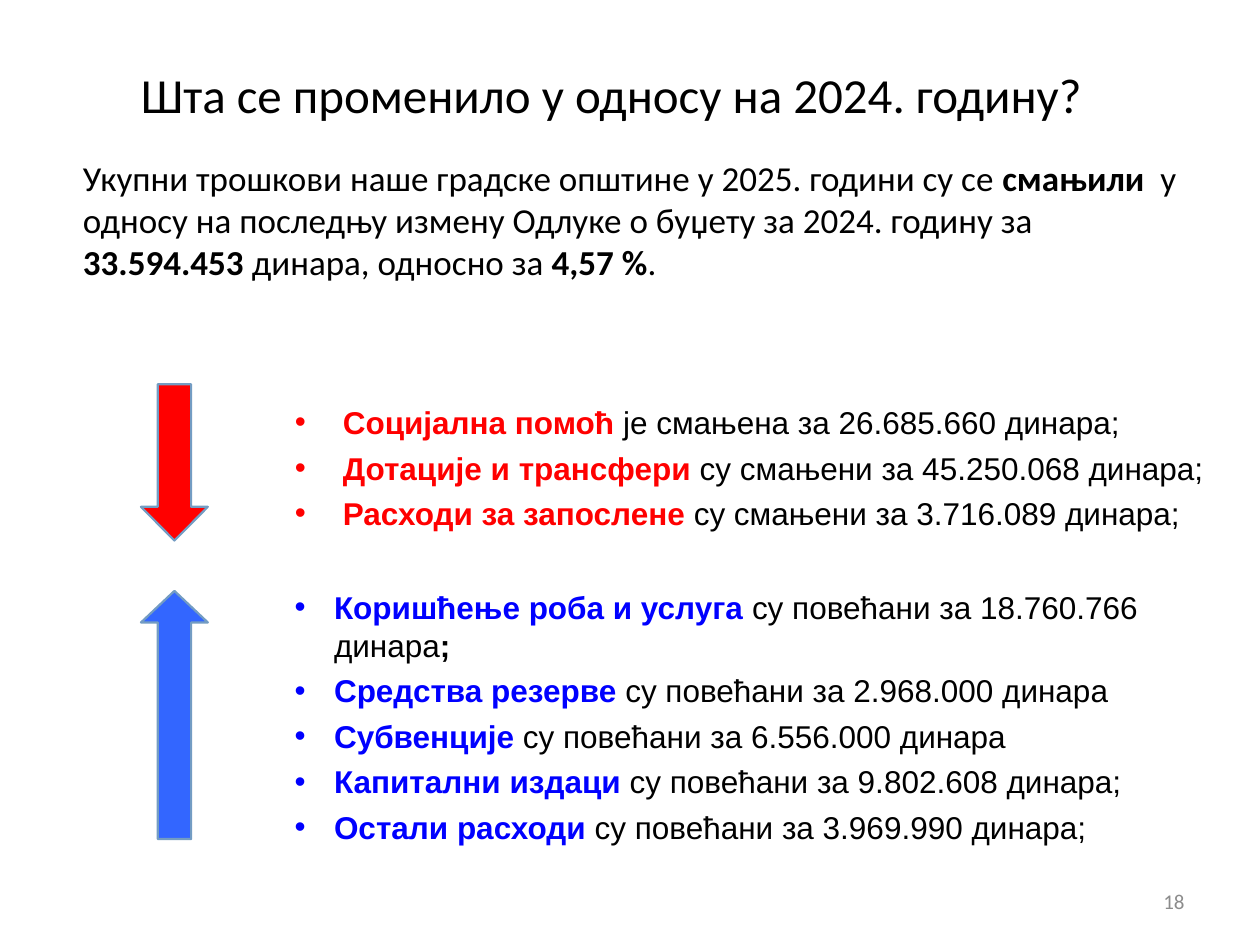
"""Builds the slide on budget changes against 2024."""
from lxml import etree
from pptx import Presentation
from pptx.dml.color import RGBColor
from pptx.enum import shapes, text
from pptx.oxml.ns import qn
from pptx.util import Pt

BLACK, RED, BLUE = "000000", "FF0000", "0000FF"
TITLE = "Шта се променило у односу на 2024. годину?"
SUMMARY = [
    ("Укупни трошкови наше градске општине у 2025. години су се ", False),
    ("смањили", True),
    ("  у односу на последњу измену Одлуке о буџету за 2024. годину за ", False),
    ("33.594.453 ", True),
    ("динара, односно за ", False),
    ("4,57 %", True),
    (".", False),
]
DECREASES = [
    ("Социјална помоћ ", "је смањена за 26.685.660 динара;", ""),
    ("Дотације и трансфери ", "су смањени за 45.250.068 динара;", ""),
    ("Расходи за запослене ", "су смањени за 3.716.089 динара;", ""),
]
INCREASES = [
    ("Коришћење роба и услуга ", "су повећани за 18.760.766 динара", ";"),
    ("Средства резерве ", "су повећани за 2.968.000 динара", ""),
    ("Субвенције ", "су повећани за 6.556.000 динара", ""),
    ("Капитални издаци ", "су повећани за 9.802.608 динара;", ""),
    ("Остали расходи ", "су повећани за 3.969.990 динара;", ""),
]
ARROWS = [
    (shapes.MSO_SHAPE.DOWN_ARROW, 219.6, 89.3, 0.503, RED),
    (shapes.MSO_SHAPE.UP_ARROW, 337.7, 141.8, 0.472, "3366FF"),
]


def rgb(value):
    """Turn a hex string into a colour."""
    return RGBColor.from_string(value)


def add_run(p, words, size=18, font="Arial", color=BLACK, bold=False):
    """Add formatted text to a paragraph."""
    r = p.add_run()
    r.text = words
    r.font.size, r.font.name, r.font.bold = Pt(size), font, bold
    r.font.color.rgb = rgb(color)


def place(sp, left, top, width, height, anchor=text.MSO_ANCHOR.TOP):
    """Position a text shape and return its text frame."""
    sp.left, sp.top, sp.width, sp.height = map(Pt, (left, top, width, height))
    tf = sp.text_frame
    tf.word_wrap, tf.auto_size = True, text.MSO_AUTO_SIZE.NONE
    tf.vertical_anchor = anchor
    return tf


def set_indent(p, margin, bullet=None):
    """Set the left margin and a hanging bullet, or no bullet."""
    pPr = p._p.get_or_add_pPr()
    pPr.set("marL", str(Pt(margin)))
    pPr.set("indent", str(-Pt(margin) if bullet else 0))
    if bullet:
        font = etree.SubElement(pPr, qn("a:buFont"))
        font.set("typeface", "Arial")
        etree.SubElement(pPr, qn("a:buChar")).set("char", bullet)
    else:
        etree.SubElement(pPr, qn("a:buNone"))


def fill_list(tf, items, color, margin):
    """Write bullets that open with a coloured bold term."""
    for i, (term, change, ending) in enumerate(items):
        p = tf.add_paragraph() if i else tf.paragraphs[0]
        p.space_before = Pt(4.4 if i else 0)
        set_indent(p, margin, "•")
        add_run(p, term, color=color, bold=True)
        add_run(p, change)
        if ending:
            add_run(p, ending, bold=True)


def add_arrow(slide, kind, top, height, head, color):
    """Draw a block arrow in the left column."""
    sp = slide.shapes.add_shape(kind, Pt(80.6), Pt(top), Pt(38.2), Pt(height))
    sp.adjustments[0], sp.adjustments[1] = 0.5, head
    sp.shadow.inherit = False
    sp.fill.solid()
    sp.fill.fore_color.rgb = rgb(color)
    sp.line.color.rgb = rgb("739CC3")
    sp.line.width = Pt(1.25)


def main():
    prs = Presentation()
    prs.slide_width, prs.slide_height = Pt(720), Pt(540)
    slide = prs.slides.add_slide(prs.slide_layouts[3])
    title, summary, decreases = slide.placeholders

    p = place(title, 25.2, 20.9, 648, 65.5, text.MSO_ANCHOR.MIDDLE).paragraphs[0]
    p.alignment = text.PP_ALIGN.CENTER
    add_run(p, TITLE, 28, "Calibri")

    p = place(summary, 38.2, 85.7, 648, 89.3).paragraphs[0]
    p.space_before = Pt(0)
    set_indent(p, 2)
    for words, bold in SUMMARY:
        add_run(p, words, 20, "Calibri", bold=bold)

    tf = place(decreases, 161.3, 205.9, 539.3, 112.3)
    tf.margin_top = Pt(24.4)
    fill_list(tf, DECREASES, RED, 27.4)

    increases = slide.shapes.add_textbox(0, 0, 0, 0)
    fill_list(place(increases, 161.3, 332.6, 539.3, 158.4), INCREASES, BLUE, 22.5)

    for arrow in ARROWS:
        add_arrow(slide, *arrow)

    number = slide.shapes.add_textbox(0, 0, 0, 0)
    p = place(number, 516.2, 500.4, 167.8, 28.8, text.MSO_ANCHOR.MIDDLE).paragraphs[0]
    p.alignment = text.PP_ALIGN.RIGHT
    add_run(p, "18", 12, "Calibri", "8C8C8C")

    prs.save("out.pptx")


if __name__ == "__main__":
    main()
